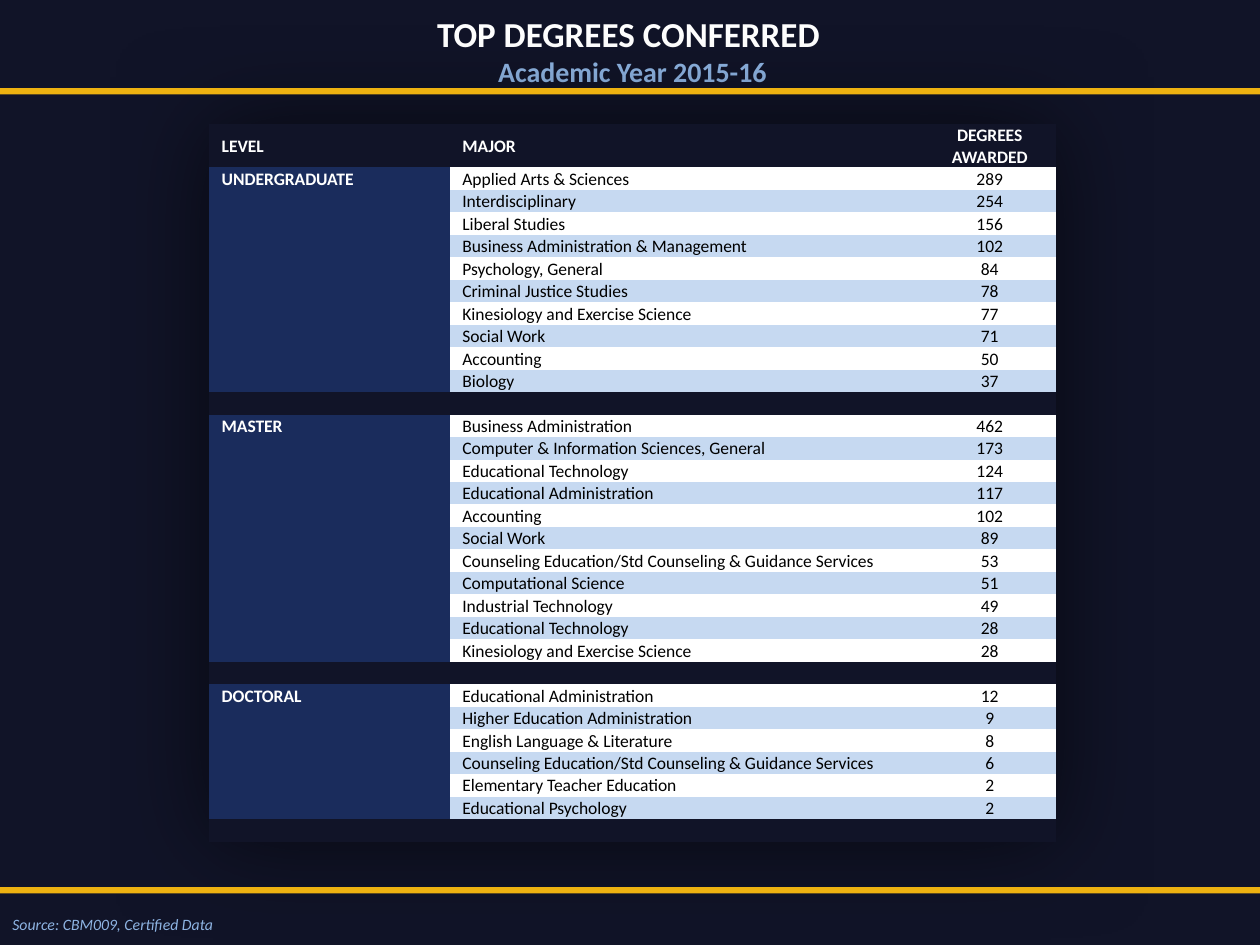
import pptx
import pptx.util
import pptx.dml.color
import pptx.enum.text
import pptx.enum.shapes
import pptx.oxml
import pptx.oxml.ns
import lxml.etree

HUE = {"night": "111428", "navy": "1A2C5C", "pale": "C6D9F1", "sky": "8EB4E3",
       "gold": "EEB211", "white": "FFFFFF", "black": "000000"}
ALIGN = pptx.enum.text.PP_ALIGN
MID = pptx.enum.text.MSO_ANCHOR.MIDDLE
FIT = pptx.enum.text.MSO_AUTO_SIZE.SHAPE_TO_FIT_TEXT
RECT = pptx.enum.shapes.MSO_SHAPE.RECTANGLE
RGB = pptx.dml.color.RGBColor.from_string
NO_STYLE = "{2D5ABB26-0587-4C30-8999-92F81FD0307C}"

GROUPS = {
    "UNDERGRADUATE": [
        ("Applied Arts & Sciences", 289), ("Interdisciplinary", 254),
        ("Liberal Studies", 156), ("Business Administration & Management", 102),
        ("Psychology, General", 84), ("Criminal Justice Studies", 78),
        ("Kinesiology and Exercise Science", 77), ("Social Work", 71),
        ("Accounting", 50), ("Biology", 37)],
    "MASTER": [
        ("Business Administration", 462),
        ("Computer & Information Sciences, General", 173),
        ("Educational Technology", 124), ("Educational Administration", 117),
        ("Accounting", 102), ("Social Work", 89),
        ("Counseling Education/Std Counseling & Guidance Services", 53),
        ("Computational Science", 51), ("Industrial Technology", 49),
        ("Educational Technology", 28), ("Kinesiology and Exercise Science", 28)],
    "DOCTORAL": [
        ("Educational Administration", 12), ("Higher Education Administration", 9),
        ("English Language & Literature", 8),
        ("Counseling Education/Std Counseling & Guidance Services", 6),
        ("Elementary Teacher Education", 2), ("Educational Psychology", 2)],
}

deck = pptx.Presentation()
deck.slide_width, deck.slide_height = pptx.util.Inches(10), pptx.util.Inches(7.5)
slide = deck.slides.add_slide(deck.slide_layouts[6])
slide.background.fill.solid()
slide.background.fill.fore_color.rgb = RGB(HUE["night"])


def place(x, y, w, h):
    """Turn percents of the slide into lengths."""
    wide, high = deck.slide_width / 100, deck.slide_height / 100
    return int(x * wide), int(y * high), int(w * wide), int(h * high)


def write(para, text, size=10, hue="white", bold=False, italic=False, align=ALIGN.LEFT):
    para.alignment = align
    if not text:
        # An empty line keeps its size in the end mark
        end = lxml.etree.SubElement(para._p, pptx.oxml.ns.qn("a:endParaRPr"))
        end.set("sz", str(size * 100))
        return
    run = para.add_run()
    run.text = text
    font = run.font
    font.name, font.size = "Calibri", pptx.util.Pt(size)
    font.bold, font.italic = bold, italic
    font.color.rgb = RGB(HUE[hue])


# Title
title = slide.shapes.add_textbox(*place(17.4, 0.67, 65.6, 17.07)).text_frame
title.word_wrap, title.auto_size = True, FIT
write(title.paragraphs[0], "TOP DEGREES CONFERRED ", size=20, bold=True, align=ALIGN.CENTER)
write(title.add_paragraph(), "Academic Year 2015-16", size=16, hue="sky", bold=True,
      align=ALIGN.CENTER)

# Table rows: three texts, three fills, body hue
rows = [(("LEVEL", "MAJOR", "DEGREES AWARDED"), ("night",) * 3, "white")]
for level, majors in GROUPS.items():
    for i, (major, count) in enumerate(majors):
        tint = ("white", "pale")[i % 2]
        rows.append(((level if i == 0 else "", major, str(count)),
                     ("navy", tint, tint), "black"))
    rows.append((("", "", ""), ("night",) * 3, "white"))

# Table
frame = slide.shapes.add_table(len(rows), 3, *place(16.6, 13.13, 67.2, 76.13))
table = frame.table
for col, share in zip(table.columns, (19.1, 37.6, 10.5)):
    col.width = int(deck.slide_width * share / 100)
pitch = pptx.util.Inches(5.36 / (len(rows) - 1))
for r, (texts, fills, ink) in enumerate(rows):
    table.rows[r].height = pitch
    for c, (text, fill) in enumerate(zip(texts, fills)):
        cell = table.cell(r, c)
        cell.fill.solid()
        cell.fill.fore_color.rgb = RGB(HUE[fill])
        cell.vertical_anchor = MID
        cell.margin_left = pptx.util.Inches(0.01 if c == 2 else 0.1)
        cell.margin_right = pptx.util.Inches(0.01 if c == 2 else 0)
        cell.margin_top, cell.margin_bottom = pptx.util.Inches(0.01), 0
        write(cell.text_frame.paragraphs[0], text, bold=c == 0 or r == 0,
              hue="white" if c == 0 else ink,
              align=ALIGN.CENTER if c == 2 else ALIGN.LEFT)
frame.height = place(0, 0, 0, 76.13)[3]

# Plain table style with a soft shadow
props = table._tbl.tblPr
props.find(pptx.oxml.ns.qn("a:tableStyleId")).text = NO_STYLE
props.insert(0, pptx.oxml.parse_xml(
    '<a:effectLst %s><a:outerShdw blurRad="730000" dist="0" algn="ctr" rotWithShape="0">'
    '<a:srgbClr val="000000"><a:alpha val="60000"/></a:srgbClr>'
    '</a:outerShdw></a:effectLst>' % pptx.oxml.ns.nsdecls("a")))

# Gold bands
for top in (93.87, 9.33):
    band = slide.shapes.add_shape(RECT, *place(0, top, 100, 0.67))
    band.shadow.inherit = False
    band.fill.solid()
    band.fill.fore_color.rgb = RGB(HUE["gold"])
    band.line.fill.background()

# Source note
note = slide.shapes.add_textbox(*place(0, 96.13, 18.6, 3.33)).text_frame
note.word_wrap, note.auto_size = True, FIT
write(note.paragraphs[0], "Source: CBM009, Certified Data", size=9, hue="sky", italic=True)

deck.save("out.pptx")
